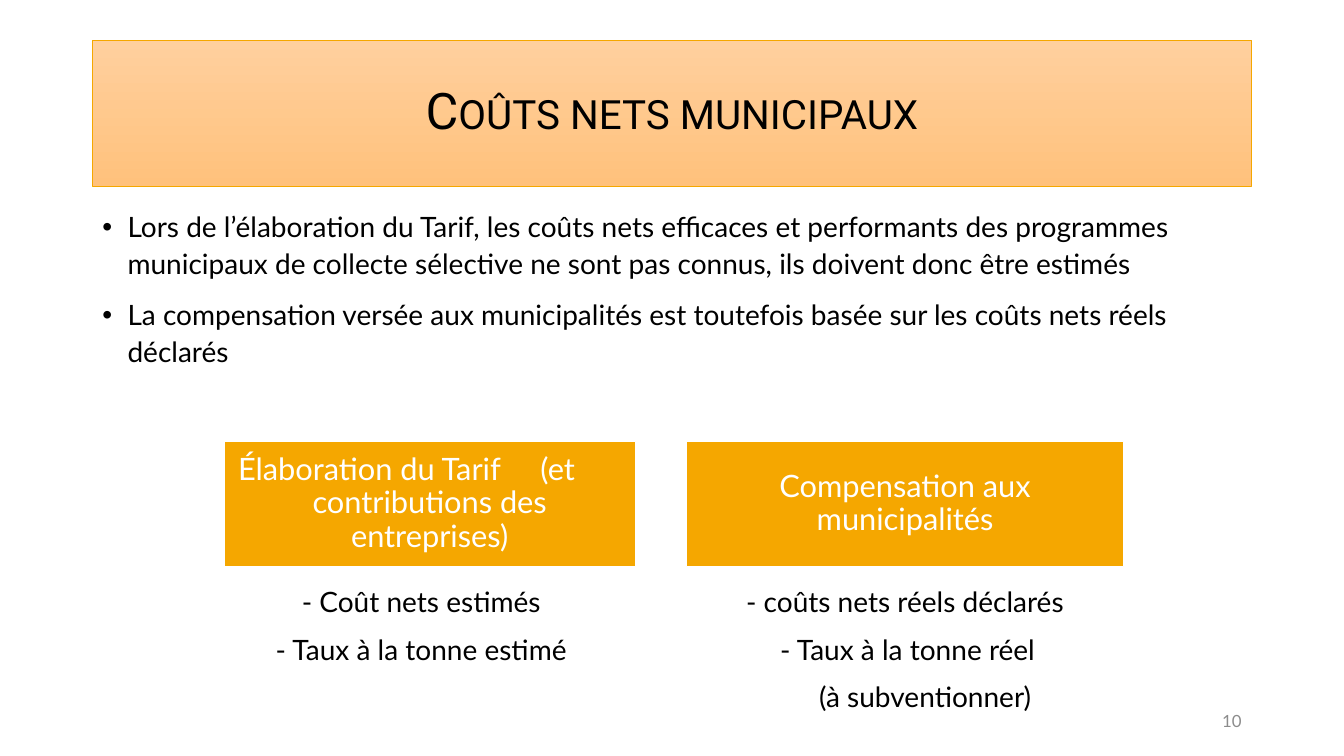
"""Build the slide on net municipal costs."""
import dataclasses

import lxml.etree
import pptx
import pptx.dml.color
import pptx.enum.shapes
import pptx.enum.text
import pptx.oxml.ns
import pptx.util

ALIGN = pptx.enum.text.PP_ALIGN
ANCHOR = pptx.enum.text.MSO_ANCHOR


@dataclasses.dataclass(frozen=True)
class Theme:
    black: str = "000000"
    white: str = "FFFFFF"
    grey: str = "8C8C8C"
    orange: str = "F5A700"
    gradient: tuple = ("FFD09E", "FFC17C")
    body_font: str = "Lato"
    title_font: str = "Roboto"
    title_size: int = 36
    card_size: int = 22
    body_size: int = 20
    number_size: int = 12


def rgb(value):
    return pptx.dml.color.RGBColor.from_string(value)


def apply(target, values):
    for name, value in values.items():
        setattr(target, name, value)


class SlideBuilder:
    columns, rows = 160, 150

    def __init__(self, deck, theme):
        self.deck, self.theme = deck, theme
        self.page = deck.slides.add_slide(deck.slide_layouts[6])

    def place(self, left, top, width, height):
        column = self.deck.slide_width / self.columns
        row = self.deck.slide_height / self.rows
        return [round(n * unit) for n, unit in
                zip((left, top, width, height), (column, row, column, row))]

    def rectangle(self, area, fills, line, line_width):
        box = self.page.shapes.add_shape(
            pptx.enum.shapes.MSO_SHAPE.RECTANGLE, *self.place(*area))
        box.shadow.inherit = False
        if len(fills) == 1:
            box.fill.solid()
            box.fill.fore_color.rgb = rgb(fills[0])
        else:
            box.fill.gradient()
            box.fill.gradient_angle = 270
            for stop, color in zip(box.fill.gradient_stops, fills):
                stop.color.rgb = rgb(color)
        box.line.color.rgb = rgb(line)
        box.line.width = pptx.util.Pt(line_width)
        return box

    def text_box(self, area):
        return self.page.shapes.add_textbox(*self.place(*area))

    def frame(self, box, anchor, inset=None):
        frame = box.text_frame
        apply(frame, {"word_wrap": True, "vertical_anchor": anchor})
        if inset is not None:
            sides = ("left", "right", "top", "bottom")
            apply(frame, {f"margin_{side}": pptx.util.Inches(inset) for side in sides})
        return frame

    def paragraph(self, frame, text, size, color, font=None, small_caps=False,
                  indent=0, hanging=0, bullet=None, tab=None, **layout):
        para = frame.paragraphs[0]
        if para.runs:
            para = frame.add_paragraph()
        else:
            layout.pop("space_before", None)
        properties = para._p.get_or_add_pPr()
        properties.set("marL", str(pptx.util.Inches(indent)))
        properties.set("indent", str(pptx.util.Inches(-hanging)))
        if bullet:
            self.child(properties, "a:buFont", typeface="Arial")
            self.child(properties, "a:buChar", char=bullet)
        if tab:
            stops = self.child(properties, "a:tabLst")
            self.child(stops, "a:tab", pos=str(pptx.util.Inches(tab)), algn="r")
        apply(para, layout)
        span = para.add_run()
        span.text = text
        apply(span.font, {"name": font or self.theme.body_font,
                          "size": pptx.util.Pt(size)})
        span.font.color.rgb = rgb(color)
        if small_caps:
            span._r.get_or_add_rPr().set("cap", "small")

    def child(self, parent, tag, **attributes):
        return lxml.etree.SubElement(parent, pptx.oxml.ns.qn(tag), attributes)

    def title(self, area, text):
        box = self.rectangle(area, self.theme.gradient, self.theme.orange, 0.5)
        self.paragraph(self.frame(box, ANCHOR.MIDDLE), text, self.theme.title_size,
                       self.theme.black, self.theme.title_font, small_caps=True,
                       alignment=ALIGN.CENTER, line_spacing=0.9)

    def bullets(self, area, lines):
        frame = self.frame(self.text_box(area), ANCHOR.TOP)
        for line in lines:
            self.paragraph(frame, line, self.theme.body_size, self.theme.black,
                           indent=0.25, hanging=0.25, bullet="•",
                           line_spacing=1.1, space_before=pptx.util.Pt(10))

    def card(self, area, lines):
        box = self.rectangle(area, [self.theme.orange], self.theme.white, 1)
        frame = self.frame(box, ANCHOR.MIDDLE, 0.09)
        for text, layout in lines:
            values = {"alignment": ALIGN.CENTER, "line_spacing": 0.9, **layout}
            self.paragraph(frame, text, self.theme.card_size, self.theme.white, **values)

    def details(self, area, lines):
        frame = self.frame(self.text_box(area), ANCHOR.TOP, 0)
        for text, indent in lines:
            self.paragraph(frame, text, self.theme.body_size, self.theme.black,
                           indent=indent, alignment=ALIGN.CENTER,
                           space_before=pptx.util.Pt(10))

    def page_number(self, area, text):
        self.paragraph(self.frame(self.text_box(area), ANCHOR.MIDDLE), text,
                       self.theme.number_size, self.theme.grey, alignment=ALIGN.RIGHT)


deck = pptx.Presentation()
deck.slide_width = pptx.util.Inches(13.33)
deck.slide_height = pptx.util.Inches(7.5)
slide = SlideBuilder(deck, Theme())

slide.title((11, 8, 138, 29), "Coûts nets municipaux")
slide.bullets((11, 40, 138, 36), [
    "Lors de l’élaboration du Tarif, les coûts nets efficaces et performants des "
    "programmes municipaux de collecte sélective ne sont pas connus, ils doivent "
    "donc être estimés",
    "La compensation versée aux municipalités est toutefois basée sur les coûts "
    "nets réels déclarés",
])

cards = [
    (26.65, 49, -1,
     [("Élaboration du Tarif\t(et",
       {"alignment": ALIGN.LEFT, "indent": 0.05, "tab": 3.84}),
      ("contributions des entreprises)", {})],
     [("- Coût nets estimés", 0), ("- Taux à la tonne estimé", 0)]),
    (81.75, 52, 0,
     [("Compensation aux municipalités", {})],
     [("- coûts nets réels déclarés", 0), ("- Taux à la tonne réel", 0.05),
      ("(à subventionner)", 0.4)]),
]
for left, width, shift, heading, points in cards:
    slide.card((left, 87.6, width, 24.8), heading)
    slide.details((left + shift, 116, width, 29), points)

slide.page_number((113, 139, 36, 8), "10")
deck.save("out.pptx")
